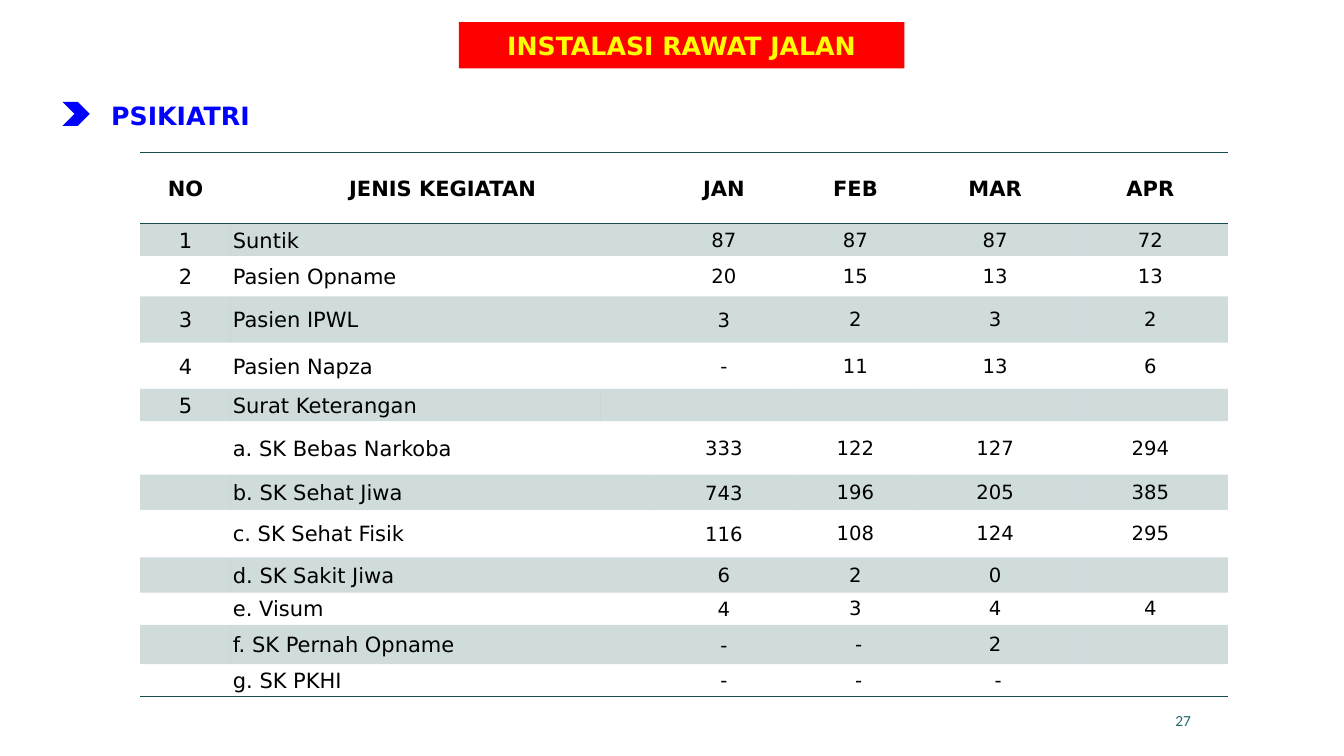
from lxml.etree import SubElement
from pptx import Presentation
from pptx.dml.color import RGBColor
from pptx.enum.shapes import MSO_SHAPE as Shape
from pptx.enum.text import MSO_ANCHOR as Anchor, PP_ALIGN as Align
from pptx.oxml.ns import qn
from pptx.util import Inches, Pt

RED = RGBColor(0xFF, 0x00, 0x00)
YELLOW = RGBColor(0xFF, 0xFF, 0x00)
BLUE = RGBColor(0x00, 0x00, 0xFF)
BLACK = RGBColor(0x00, 0x00, 0x00)
TEAL = RGBColor(0x16, 0x4B, 0x4F)
PAGE_TEAL = RGBColor(0x1F, 0x69, 0x6F)

FONT = "DejaVu Sans"
PLAIN_TABLE_STYLE = "{2D5ABB26-0587-4C30-8999-92F81FD0307C}"
BAND_ALPHA = 20000
COLUMN_WIDTHS = [0.9, 3.67, 0.53, 1.38, 1.23, 1.54, 1.54]
ROW_HEIGHTS = [0.71, 0.32, 0.4, 0.46, 0.46, 0.32, 0.53, 0.35, 0.47, 0.35, 0.32, 0.39, 0.32]
LABEL_COLUMN = 1
FIRST_VALUE_COLUMN = 3
SUBHEADING_ROW = 5
ROWS = [
    ("NO", "JENIS KEGIATAN", "JAN", "FEB", "MAR", "APR"),
    ("1", "Suntik", "87", "87", "87", "72"),
    ("2", "Pasien Opname", "20", "15", "13", "13"),
    ("3", "Pasien IPWL", "3", "2", "3", "2"),
    ("4", "Pasien Napza", "-", "11", "13", "6"),
    ("5", "Surat Keterangan", "", "", "", ""),
    ("", "a. SK Bebas Narkoba", "333", "122", "127", "294"),
    ("", "b. SK Sehat Jiwa", "743", "196", "205", "385"),
    ("", "c. SK Sehat Fisik", "116", "108", "124", "295"),
    ("", "d. SK Sakit Jiwa", "6", "2", "0", ""),
    ("", "e. Visum", "4", "3", "4", "4"),
    ("", "f. SK Pernah Opname", "-", " -", "2", ""),
    ("", "g. SK PKHI", "-", " -", " -", ""),
]


def add_run(paragraph, text, size, color, bold=False, font=FONT, align=Align.CENTER):
    paragraph.alignment = align
    run = paragraph.add_run()
    run.text = text
    run.font.name = font
    run.font.size = Pt(size)
    run.font.bold = bold
    run.font.color.rgb = color


def place(shape, left, top, width, height):
    shape.left, shape.top = Inches(left), Inches(top)
    shape.width, shape.height = Inches(width), Inches(height)


def add_title(slide, left, top, width, height):
    title = slide.shapes.title
    place(title, left, top, width, height)
    geometry = SubElement(title._element.spPr, qn("a:prstGeom"), prst="roundRect")
    SubElement(geometry, qn("a:avLst"))
    title.fill.solid()
    title.fill.fore_color.rgb = RED
    title.text_frame.vertical_anchor = Anchor.MIDDLE
    add_run(title.text_frame.paragraphs[0], "INSTALASI RAWAT JALAN", 18, YELLOW, True)


def add_text(slide, left, top, width, height, wrap=True):
    box = slide.shapes.add_textbox(Inches(left), Inches(top), Inches(width), Inches(height))
    box.text_frame.word_wrap = wrap
    return box.text_frame


def add_section_heading(slide, left, top):
    chevron = slide.shapes.add_shape(
        Shape.CHEVRON, Inches(left), Inches(top + 0.06), Inches(0.27), Inches(0.24))
    chevron.shadow.inherit = False
    chevron.fill.solid()
    chevron.fill.fore_color.rgb = BLUE
    chevron.line.fill.background()
    frame = add_text(slide, left + 0.3, top, 1.74, 0.4, wrap=False)
    add_run(frame.paragraphs[0], "PSIKIATRI", 18, BLUE, True)


def add_border(cell, side):
    line = SubElement(cell._tc.get_or_add_tcPr(), qn(f"a:{side}"), w=str(Pt(1)))
    SubElement(SubElement(line, qn("a:solidFill")), qn("a:srgbClr"), val=str(TEAL))


def format_cell(cell, row, column):
    margin = Inches(0.01 if row and column > FIRST_VALUE_COLUMN else 0.02)
    cell.margin_left = cell.margin_right = cell.margin_top = margin
    cell.margin_bottom = 0
    cell.vertical_anchor = Anchor.MIDDLE
    if row == 0:
        add_border(cell, "lnT")
    if row in (0, len(ROWS) - 1):
        add_border(cell, "lnB")
    if row % 2:
        cell.fill.solid()
        cell.fill.fore_color.rgb = TEAL
        for color in cell._tc.tcPr.iter(qn("a:srgbClr")):
            SubElement(color, qn("a:alpha"), val=str(BAND_ALPHA))
    else:
        cell.fill.background()


def fill_cell(cell, text, row, column):
    paragraph = cell.text_frame.paragraphs[0]
    if not text:
        SubElement(paragraph._p, qn("a:endParaRPr"), sz="1400")
        return
    size = 14 if row and column >= FIRST_VALUE_COLUMN else 15
    align = Align.LEFT if row and column == LABEL_COLUMN else Align.CENTER
    add_run(paragraph, text, size, BLACK, row == 0, align=align)


def add_activity_table(slide, left, top):
    frame = slide.shapes.add_table(
        len(ROWS), len(COLUMN_WIDTHS), Inches(left), Inches(top),
        Inches(sum(COLUMN_WIDTHS)), Inches(sum(ROW_HEIGHTS)))
    table = frame.table
    table.first_row = table.horz_banding = False
    for style in frame._element.iter(qn("a:tableStyleId")):
        style.text = PLAIN_TABLE_STYLE
    for column, width in zip(table.columns, COLUMN_WIDTHS):
        column.width = Inches(width)
    for row, (height, values) in enumerate(zip(ROW_HEIGHTS, ROWS)):
        table.rows[row].height = Inches(height)
        texts = [*values[:2], "", *values[2:]]
        for column, text in enumerate(texts):
            cell = table.cell(row, column)
            format_cell(cell, row, column)
            fill_cell(cell, text, row, column)
        start = LABEL_COLUMN + (row == SUBHEADING_ROW)
        table.cell(row, start).merge(table.cell(row, start + 1))


def add_page_number(slide, left, top, width, height):
    frame = add_text(slide, left, top, width, height)
    frame.vertical_anchor = Anchor.MIDDLE
    add_run(frame.paragraphs[0], "27", 11, PAGE_TEAL, font="Calibri", align=Align.RIGHT)


def main():
    presentation = Presentation()
    presentation.slide_width = Inches(13.33)
    presentation.slide_height = Inches(7.5)
    slide = presentation.slides.add_slide(presentation.slide_layouts[5])
    add_title(slide, 4.55, 0.22, 4.42, 0.46)
    add_section_heading(slide, 0.62, 0.95)
    add_activity_table(slide, 1.39, 1.51)
    add_page_number(slide, 8.8, 6.95, 3.11, 0.4)
    presentation.save("out.pptx")


if __name__ == "__main__":
    main()
